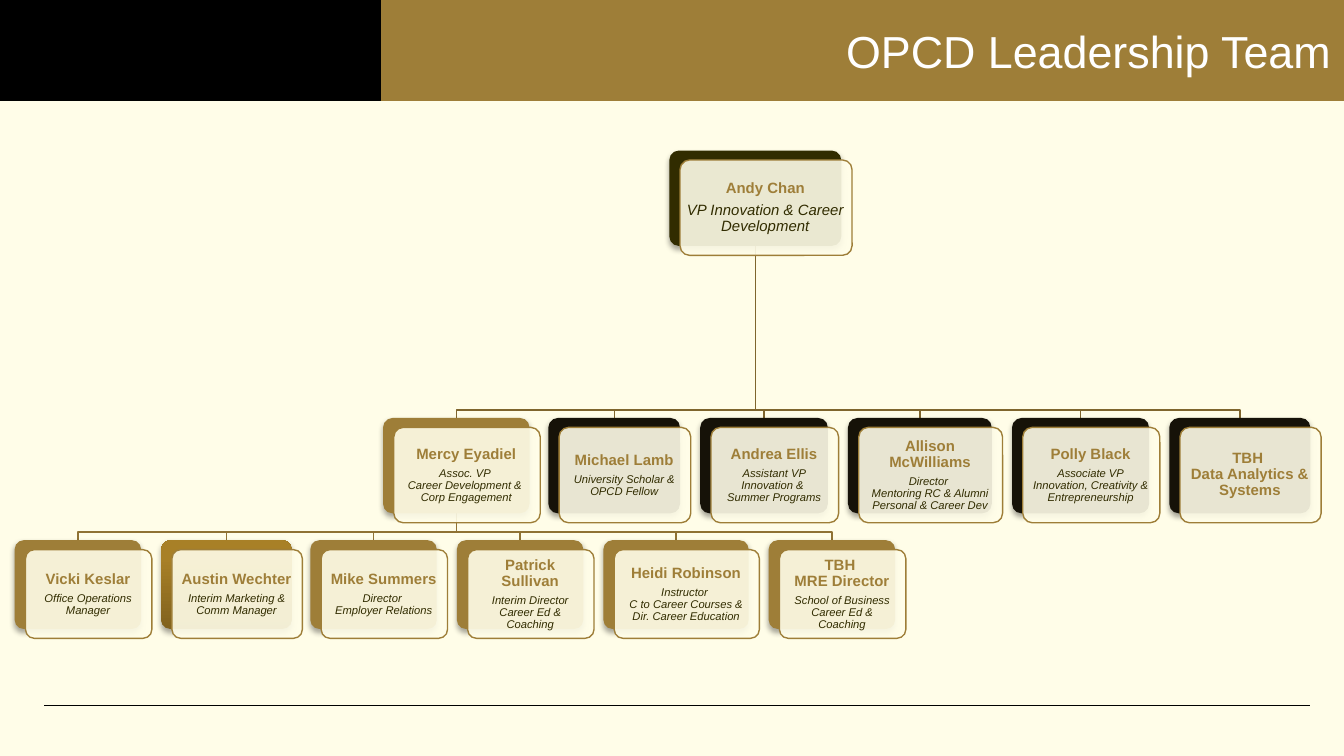
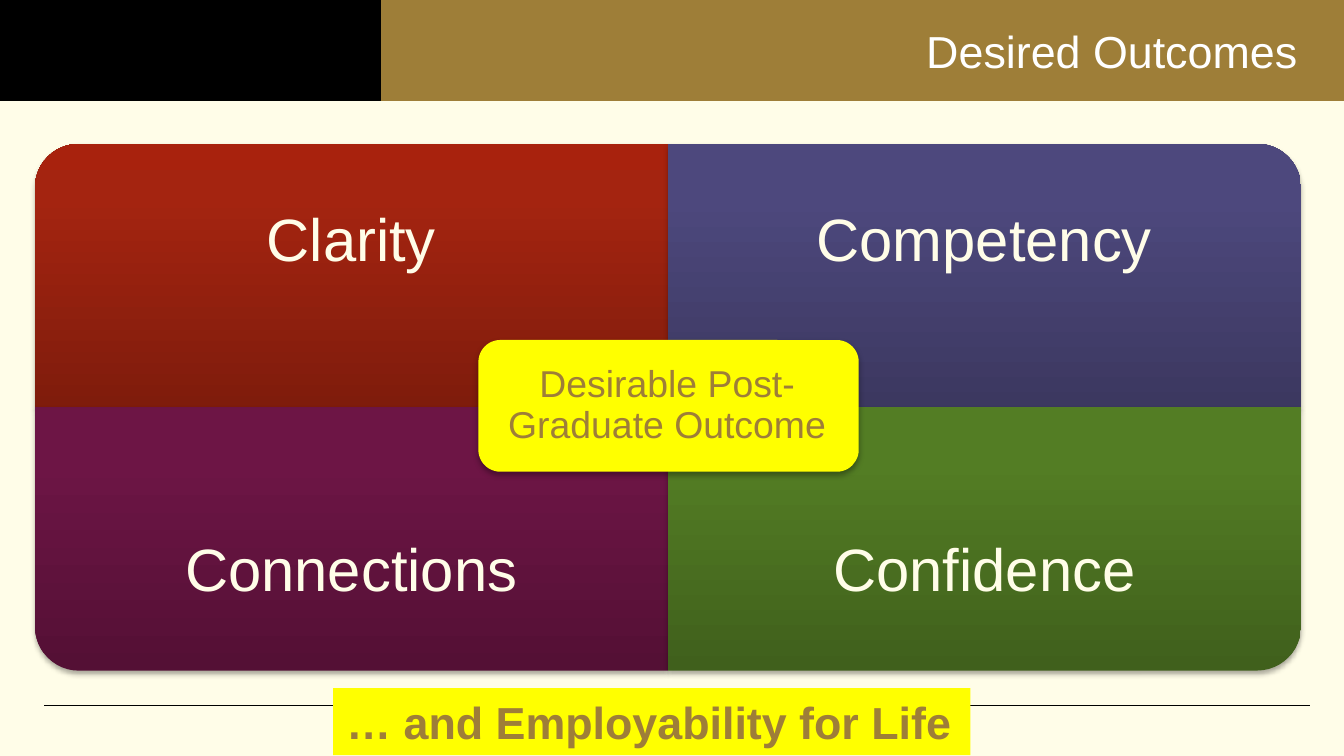
import pptx
import pptx.util
import pptx.dml.color
import pptx.enum.shapes
import pptx.enum.text
import pptx.oxml
import pptx.oxml.ns

Inches, Pt = pptx.util.Inches, pptx.util.Pt
KIND = pptx.enum.shapes.MSO_SHAPE
ALIGN = pptx.enum.text.PP_ALIGN
MID = pptx.enum.text.MSO_ANCHOR.MIDDLE
qn = pptx.oxml.ns.qn
NS = pptx.oxml.ns.nsdecls("a")

FONT = "Arial"
HUE = {
    "cream": "FFFDE8", "gold": "9E7E38", "black": "000000", "white": "FFFFFF",
    "olive": "312C00", "dark": "161208", "yellow": "FFFF00",
    "wire": "7F652D", "twig": "8F7233",
}
# Gradients: bottom, 80 percent, top
FADE = {
    "amber": ("81621E", "A88027", "AB8125"),
    "red": ("7F1C0C", "A42410", "A8220D"),
    "blue": ("3C3860", "4D487D", "4D487F"),
    "plum": ("541035", "6D1545", "6F1345"),
    "green": ("40601C", "537D24", "537F23"),
}

# Team cards: left, width, back colour, name, role
HEAD = (4.98, 1.28, "olive", "Andy Chan", "VP Innovation & Career Development")
LEADS = [
    (2.85, 1.09, "gold", "Mercy Eyadiel",
     "Assoc. VP \nCareer Development & \nCorp Engagement"),
    (4.08, 0.98, "dark", "Michael Lamb", "University Scholar & OPCD Fellow"),
    (5.21, 0.95, "dark", "Andrea Ellis",
     "Assistant VP Innovation & \nSummer Programs"),
    (6.31, 1.07, "dark", "Allison McWilliams",
     "Director \nMentoring RC & Alumni Personal & Career Dev"),
    (7.53, 1.02, "dark", "Polly Black",
     "Associate VP\nInnovation, Creativity & Entrepreneurship"),
    (8.70, 1.05, "dark", "TBH \nData Analytics & Systems", ""),
]
STAFF = [
    (0.11, 0.94, "gold", "Vicki Keslar", "Office Operations Manager"),
    (1.20, 0.97, "amber", "Austin Wechter", "Interim Marketing & Comm Manager"),
    (2.31, 0.94, "gold", "Mike Summers", "Director \nEmployer Relations"),
    (3.40, 0.94, "gold", "Patrick Sullivan",
     "Interim Director\nCareer Ed & Coaching"),
    (4.49, 1.08, "gold", "Heidi Robinson",
     "Instructor \nC to Career Courses & Dir. Career Education"),
    (5.72, 0.94, "gold", "TBH \nMRE Director",
     "School of Business\nCareer Ed & Coaching"),
]
# Rows: top, card height, role size
TOP, MAIN, BASE = (1.12, 0.71, 8), (3.11, 0.71, 6), (4.02, 0.66, 6)

# Outcomes: word, gradient, turn, column, row
GOALS = [
    ("Clarity", "red", 270, 0, 0),
    ("Competency", "blue", 0, 1, 0),
    ("Connections", "plum", 180, 0, 1),
    ("Confidence", "green", 90, 1, 1),
]


def rgb(hue):
    return pptx.dml.color.RGBColor.from_string(HUE[hue])


def paint(shape, hue):
    """Fill with a flat colour or a vertical fade that ignores rotation."""
    if hue in HUE:
        shape.fill.solid()
        shape.fill.fore_color.rgb = rgb(hue)
        return
    stops = "".join(
        f'<a:gs pos="{pos}"><a:srgbClr val="{val}"/></a:gs>'
        for pos, val in zip((0, 80000, 100000), FADE[hue]))
    grad = pptx.oxml.parse_xml(
        f'<a:gradFill {NS} rotWithShape="0"><a:gsLst>{stops}</a:gsLst>'
        '<a:lin ang="16200000" scaled="0"/></a:gradFill>')
    shape._element.spPr.find(qn("a:prstGeom")).addnext(grad)


def block(slide, kind, box, hue, edge=None, shade=False):
    shape = slide.shapes.add_shape(kind, *map(Inches, box))
    shape.shadow.inherit = False
    paint(shape, hue)
    if edge:
        shape.line.color.rgb = rgb(edge)
        shape.line.width = Pt(0.75)
    else:
        shape.line.fill.background()
    if shade:
        shape._element.spPr.find(qn("a:effectLst")).append(
            pptx.oxml.parse_xml(
                f'<a:outerShdw {NS} blurRad="{Pt(3.1)}" dist="{Pt(1.8)}" '
                'dir="5400000" rotWithShape="0"><a:srgbClr val="000000">'
                '<a:alpha val="35000"/></a:srgbClr></a:outerShdw>'))
    return shape


def write(para, text, size, hue, bold=False, slant=False):
    for num, line in enumerate(text.split("\n")):
        if num:
            # A break needs the text size too, or it widens the spacing
            para.add_line_break()
            para._p.findall(qn("a:br"))[-1].append(
                pptx.oxml.parse_xml(f'<a:rPr {NS} sz="{size * 100}"/>'))
        run = para.add_run()
        run.text = line
        font = run.font
        font.name, font.size = FONT, Pt(size)
        font.bold, font.italic = bold, slant
        font.color.rgb = rgb(hue)


def label(slide, box, pad, *parts):
    """Centred text; each part holds the arguments of one paragraph."""
    frame = slide.shapes.add_textbox(*map(Inches, box)).text_frame
    frame.word_wrap = True
    frame.vertical_anchor = MID
    frame.margin_left = frame.margin_right = Inches(pad)
    frame.margin_top = frame.margin_bottom = Inches(pad)
    for num, part in enumerate(parts):
        para = frame.add_paragraph() if num else frame.paragraphs[0]
        para.alignment = ALIGN.CENTER
        para.line_spacing = 0.9
        para._p.get_or_add_pPr().append(pptx.oxml.parse_xml(
            f'<a:spcAft {NS}><a:spcPct val="35000"/></a:spcAft>'))
        write(para, *part)


def start(prs, title, left, width):
    """New slide with the bands, the foot rule and a title."""
    slide = prs.slides.add_slide(prs.slide_layouts[6])
    block(slide, KIND.RECTANGLE, (0, 0, 10, 0.75), "gold", "gold")
    block(slide, KIND.RECTANGLE, (0, 0, 2.83, 0.75), "black", "black")
    rule = slide.shapes.add_connector(
        pptx.enum.shapes.MSO_CONNECTOR.STRAIGHT,
        Inches(0.33), Inches(5.25), Inches(9.75), Inches(5.25))
    rule.line.color.rgb = rgb("black")
    rule.line.width = Pt(0.75)
    rule._element.spPr.append(pptx.oxml.parse_xml(f"<a:effectLst {NS}/>"))
    frame = slide.shapes.add_textbox(
        Inches(left), 0, Inches(width), Inches(0.75)).text_frame
    frame.word_wrap = True
    frame.vertical_anchor = MID
    frame.paragraphs[0].alignment = ALIGN.RIGHT
    write(frame.paragraphs[0], title, 24, "white")
    return slide


def link(slide, boss, rank, card, row, hue):
    """Bent line from a boss's foot to the top of a card."""
    x, y = boss[0] + boss[1] / 2, rank[0] + rank[1]
    end, top = card[0] + card[1] / 2, row[0]
    bend = top - 0.06
    path = slide.shapes.build_freeform(Inches(x), Inches(y))
    path.add_line_segments(
        [(Inches(a), Inches(b)) for a, b in
         ((x, bend), (end, bend), (end, top))], close=False)
    wire = path.convert_to_shape()
    wire.shadow.inherit = False
    wire.fill.background()
    wire.line.color.rgb = rgb(hue)
    wire.line.width = Pt(0.75)


def place(slide, card, row):
    """Coloured back, pale front and text of one team card."""
    left, width, hue, name, role = card
    top, high, size = row
    back = block(slide, KIND.ROUNDED_RECTANGLE, (left, top, width, high),
                 hue, shade=True)
    x, y = left + 0.08, top + 0.07
    front = block(slide, KIND.ROUNDED_RECTANGLE, (x, y, width, high),
                  "cream", "gold")
    back.adjustments[0] = front.adjustments[0] = 0.1
    tint = front._element.spPr.find(qn("a:solidFill"))[0]
    tint.append(pptx.oxml.parse_xml(f'<a:alpha {NS} val="90000"/>'))
    parts = [(name, 8, "gold", True)]
    if role:
        parts.append((role, size, "olive", False, True))
    label(slide, (x + 0.02, y + 0.02, width - 0.05, high - 0.04), 0.03, *parts)


def team(prs):
    slide = start(prs, "OPCD Leadership Team", 3.25, 6.75)
    for card in LEADS:
        link(slide, HEAD, TOP, card, MAIN, "wire")
    for card in STAFF:
        link(slide, LEADS[0], MAIN, card, BASE, "twig")
    for cards, row in (([HEAD], TOP), (LEADS, MAIN), (STAFF, BASE)):
        for card in cards:
            place(slide, card, row)


def goals(prs):
    slide = start(prs, "Desired Outcomes", 3, 6.75)
    left, top, wide, high, text = 0.26, 1.07, 4.71, 1.96, 1.47

    # Four quarters, each with its round corner turned outwards
    for word, hue, turn, col, row in GOALS:
        x, y = left + col * wide, top + row * high
        w, h = (high, wide) if turn % 180 else (wide, high)
        box = (x + (wide - w) / 2, y + (high - h) / 2, w, h)
        part = block(slide, KIND.ROUND_1_RECTANGLE, box, hue, shade=True)
        part.rotation = turn
        label(slide, (x, y + row * (high - text), wide, text), 0.25,
              (word, 32, "cream"))

    # Centre plate
    block(slide, KIND.ROUNDED_RECTANGLE, (3.56, 2.53, 2.83, 0.98), "yellow",
          shade=True)
    label(slide, (3.6, 2.58, 2.73, 0.88), 0.08,
          ("Desirable Post-Graduate Outcome", 20, "gold"))

    # Closing line
    note = slide.shapes.add_textbox(*map(Inches, (2.48, 5.12, 4.74, 0.5)))
    paint(note, "yellow")
    note.text_frame.word_wrap = False
    note.text_frame.auto_size = pptx.enum.text.MSO_AUTO_SIZE.SHAPE_TO_FIT_TEXT
    write(note.text_frame.paragraphs[0], "… and Employability for Life",
          24, "gold", True)


def main():
    prs = pptx.Presentation()
    # Widescreen, 16 to 9
    prs.slide_width = Inches(10)
    prs.slide_height = Inches(10 * 9 / 16)
    paint(prs.slide_master.background, "cream")
    team(prs)
    goals(prs)
    prs.save("out.pptx")


if __name__ == "__main__":
    main()
